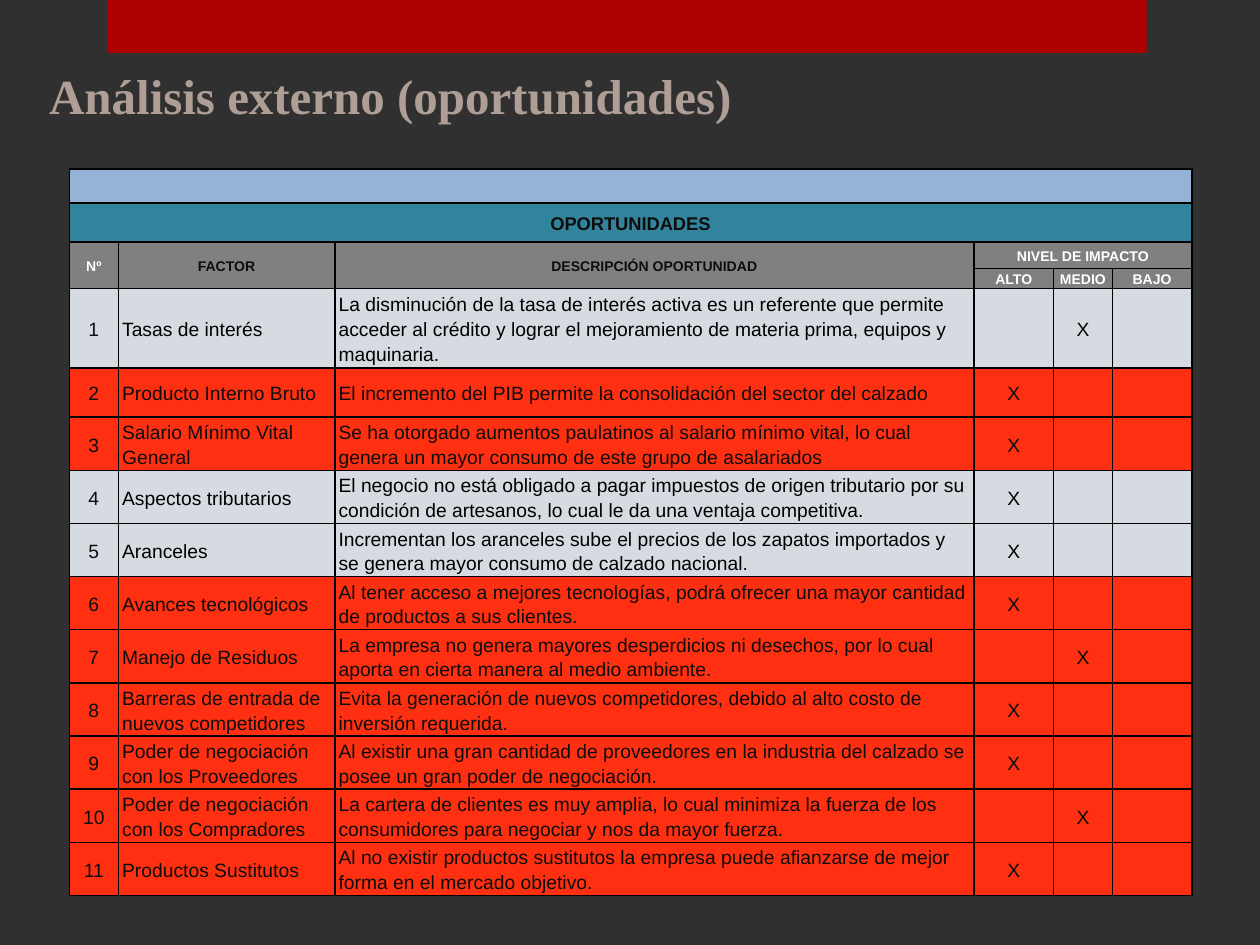
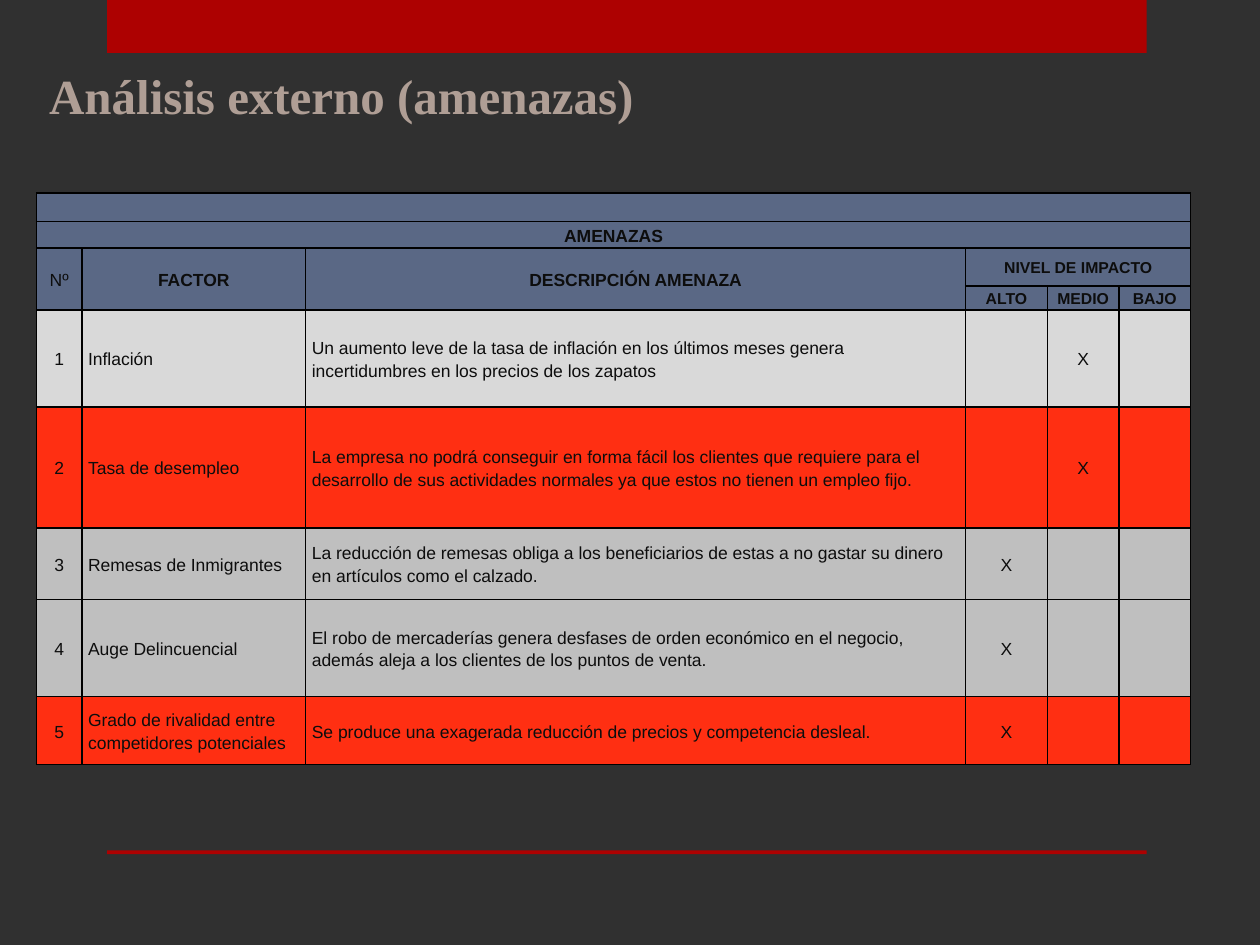
from dataclasses import dataclass
from itertools import product

from lxml.etree import SubElement
from pptx import Presentation
from pptx.dml.color import RGBColor
from pptx.enum.shapes import MSO_SHAPE as Shape
from pptx.enum.text import MSO_ANCHOR as Anchor, MSO_AUTO_SIZE as AutoSize, PP_ALIGN as Align
from pptx.oxml import parse_xml
from pptx.oxml.ns import nsdecls, qn
from pptx.util import Inches, Pt

GRID_COLUMNS, GRID_ROWS = 100, 75
SLIDE_WIDTH, SLIDE_HEIGHT = Inches(10), Inches(7.5)
TITLE_ONLY = 5


@dataclass(frozen=True)
class Theme:
    background: str = "303030"
    band: str = "AD0101"
    title: str = "AF9E95"
    ink: str = "0D0D0D"
    black: str = "000000"
    white: str = "FFFFFF"
    red: str = "FF2F12"
    title_font: str = "Times New Roman"
    table_font: str = "Arial"
    title_size: float = 28
    empty_size: float = 8
    line_spacing: float = 1.15
    border_width: float = 1


THEME = Theme()


@dataclass(frozen=True)
class Box:
    left: float
    top: float
    width: float
    height: float

    def placement(self):
        column, row = SLIDE_WIDTH / GRID_COLUMNS, SLIDE_HEIGHT / GRID_ROWS
        return {"left": round(self.left * column), "top": round(self.top * row),
                "width": round(self.width * column), "height": round(self.height * row)}


@dataclass(frozen=True)
class TableStyle:
    top_fill: str
    heading_fill: str
    label_fill: str
    label_color: str
    light_text: str
    heading_size: float
    label_size: float
    level_size: float
    body_size: float
    number_bold: bool
    inset: float


@dataclass(frozen=True)
class Factor:
    name: str
    description: str
    level: int
    fill: str = THEME.red


HIGH, MEDIUM = 0, 1
LEVELS = ["ALTO", "MEDIO", "BAJO"]
PALE, LIGHT_GREY, GREY = "D6DBE1", "D9D9D9", "BFBFBF"

OPPORTUNITY_STYLE = TableStyle(
    top_fill="95B3D7", heading_fill="31849B", label_fill="808080",
    label_color=THEME.white, light_text=THEME.black, heading_size=10.5,
    label_size=8, level_size=8, body_size=11, number_bold=True, inset=0.03)
THREAT_STYLE = TableStyle(
    top_fill="5A6885", heading_fill="5A6885", label_fill="5A6885",
    label_color=THEME.ink, light_text=THEME.ink, heading_size=10,
    label_size=10, level_size=9, body_size=10, number_bold=False, inset=0.05)

OPPORTUNITIES = [
    Factor("Tasas de interés", "La disminución de la tasa de interés activa es un referente que permite "
           "acceder al crédito y lograr el mejoramiento de materia prima, equipos y maquinaria.", MEDIUM, PALE),
    Factor("Producto Interno Bruto",
           "El incremento del PIB permite la consolidación del sector del calzado", HIGH),
    Factor("Salario Mínimo Vital General", "Se ha otorgado aumentos paulatinos al salario mínimo vital, "
           "lo cual genera un mayor consumo de este grupo de asalariados", HIGH),
    Factor("Aspectos tributarios", "El negocio no está obligado a pagar impuestos de origen tributario por su "
           "condición de artesanos, lo cual le da una ventaja competitiva.", HIGH, PALE),
    Factor("Aranceles", "Incrementan los aranceles sube el precios de los zapatos importados y se genera "
           "mayor consumo de calzado nacional.", HIGH, PALE),
    Factor("Avances tecnológicos", "Al tener acceso a mejores tecnologías, podrá ofrecer una mayor cantidad "
           "de productos a sus clientes.", HIGH),
    Factor("Manejo de Residuos", "La empresa no genera mayores desperdicios ni desechos, por lo cual aporta "
           "en cierta manera al medio ambiente.", MEDIUM),
    Factor("Barreras de entrada de nuevos competidores",
           "Evita la generación de nuevos competidores, debido al alto costo de inversión requerida.", HIGH),
    Factor("Poder de negociación con los Proveedores", "Al existir una gran cantidad de proveedores en la "
           "industria del calzado se posee un gran poder de negociación.", HIGH),
    Factor("Poder de negociación con los Compradores", "La cartera de clientes es muy amplia, lo cual minimiza "
           "la fuerza de los consumidores para negociar y nos da mayor fuerza.", MEDIUM),
    Factor("Productos Sustitutos", "Al no existir productos sustitutos la empresa puede afianzarse de mejor "
           "forma en el mercado objetivo.", HIGH),
]
THREATS = [
    Factor("Inflación", "Un aumento leve de la tasa de inflación en los últimos meses genera incertidumbres "
           "en los precios de los zapatos", MEDIUM, LIGHT_GREY),
    Factor("Tasa de desempleo", "La empresa no podrá conseguir en forma fácil los clientes que requiere para el "
           "desarrollo de sus actividades normales ya que estos no tienen un empleo fijo.", MEDIUM),
    Factor("Remesas de Inmigrantes", "La reducción de remesas obliga a los beneficiarios de estas a no gastar "
           "su dinero en artículos como el calzado.", HIGH, GREY),
    Factor("Auge Delincuencial", "El robo de mercaderías genera desfases de orden económico en el negocio, "
           "además aleja a los clientes de los puntos de venta.", HIGH, GREY),
    Factor("Grado de rivalidad entre competidores potenciales",
           "Se produce una exagerada reducción de precios y competencia desleal.", HIGH),
]


def apply(target, values):
    for name, value in values.items():
        setattr(target, name, value)


def paint(fill, color):
    fill.solid()
    fill.fore_color.rgb = RGBColor.from_string(color)


def add_span(para, text, font, size, color, bold):
    span = para.add_run()
    span.text = text
    apply(span.font, {"name": font, "size": Pt(size), "bold": bold})
    span.font.color.rgb = RGBColor.from_string(color)


def add_bands(page):
    for box in (Box(8.5, 0, 82.5, 4.2), Box(8.5, 67.5, 82.5, 0.3)):
        band = page.shapes.add_shape(Shape.RECTANGLE, **box.placement())
        band.shadow.inherit = False
        paint(band.fill, THEME.band)
        band.line.fill.background()


def set_title(page, text, box):
    title = page.shapes.title
    apply(title, box.placement())
    frame = title.text_frame
    apply(frame, {"word_wrap": False, "auto_size": AutoSize.SHAPE_TO_FIT_TEXT,
                  "vertical_anchor": Anchor.TOP})
    para = frame.paragraphs[0]
    para.alignment = Align.LEFT
    add_span(para, text, THEME.title_font, THEME.title_size, THEME.title, True)


def draw_borders(cell):
    properties = cell._tc.get_or_add_tcPr()
    for index, side in enumerate(("lnL", "lnR", "lnT", "lnB")):
        properties.insert(index, parse_xml(
            f'<a:{side} {nsdecls("a")} w="{Pt(THEME.border_width)}"><a:solidFill>'
            f'<a:srgbClr val="{THEME.black}"/></a:solidFill></a:{side}>'))


def format_cell(cell, fill, inset):
    apply(cell, {"vertical_anchor": Anchor.MIDDLE, "margin_left": Inches(inset),
                 "margin_right": Inches(inset), "margin_top": 0, "margin_bottom": 0})
    paint(cell.fill, fill)
    draw_borders(cell)
    ending = SubElement(cell.text_frame.paragraphs[0]._p, qn("a:endParaRPr"))
    ending.set("sz", str(round(THEME.empty_size * 100)))


def write_cell(cell, text, size, color, bold=False, align=Align.CENTER):
    para = cell.text_frame.paragraphs[0]
    apply(para, {"alignment": align, "line_spacing": THEME.line_spacing})
    add_span(para, text, THEME.table_font, size, color, bold)


def write_header(table, kind, heading, style):
    table.cell(0, 0).merge(table.cell(0, 5))
    table.cell(1, 0).merge(table.cell(1, 5))
    table.cell(2, 3).merge(table.cell(2, 5))
    for column in range(3):
        table.cell(2, column).merge(table.cell(3, column))
    write_cell(table.cell(1, 0), heading, style.heading_size, THEME.ink, True)
    write_cell(table.cell(2, 0), "Nº", style.label_size, style.label_color, style.number_bold)
    for column, label in enumerate(("FACTOR", f"DESCRIPCIÓN {kind}"), 1):
        write_cell(table.cell(2, column), label, style.label_size, THEME.ink, True)
    write_cell(table.cell(2, 3), "NIVEL DE IMPACTO", style.level_size, style.label_color, True)
    for column, level in enumerate(LEVELS, 3):
        write_cell(table.cell(3, column), level, style.level_size, style.label_color, True)


def write_factors(table, factors, style):
    for number, factor in enumerate(factors, 1):
        row = number + 3
        color = THEME.ink if factor.fill == THEME.red else style.light_text
        write_cell(table.cell(row, 0), str(number), style.body_size, THEME.ink)
        for column, text in enumerate((factor.name, factor.description), 1):
            write_cell(table.cell(row, column), text, style.body_size, color, align=Align.LEFT)
        write_cell(table.cell(row, 3 + factor.level), "X", style.body_size, color)


def add_factor_table(page, box, columns, rows, kind, heading, factors, style):
    place = box.placement()
    table = page.shapes.add_table(len(rows), len(columns), **place).table
    apply(table, {"first_row": False, "horz_banding": False})
    for column, share in zip(table.columns, columns):
        column.width = round(place["width"] * share / sum(columns))
    for row, share in zip(table.rows, rows):
        row.height = round(place["height"] * share / sum(rows))
    fills = [style.top_fill, style.heading_fill, style.label_fill, style.label_fill]
    fills += [factor.fill for factor in factors]
    for row, column in product(range(len(rows)), range(len(columns))):
        format_cell(table.cell(row, column), fills[row], style.inset)
    write_header(table, kind, heading, style)
    write_factors(table, factors, style)


def add_analysis_page(deck, title, title_box, **table_parts):
    page = deck.slides.add_slide(deck.slide_layouts[TITLE_ONLY])
    set_title(page, title, title_box)
    add_bands(page)
    add_factor_table(page, **table_parts)


def main():
    deck = Presentation()
    apply(deck, {"slide_width": SLIDE_WIDTH, "slide_height": SLIDE_HEIGHT})
    paint(deck.slide_master.background.fill, THEME.background)
    add_analysis_page(
        deck, "Análisis externo (oportunidades)", Box(2.9, 4.7, 63.4, 5.7),
        box=Box(5.5, 13.4, 89.1, 57.5), columns=[3.9, 17.2, 50.8, 6.3, 4.7, 6.3],
        rows=[2.7, 3.1, 2.1, 1.6, 6.3, 3.9] + [4.2] * 9,
        kind="OPORTUNIDAD", heading="OPORTUNIDADES", factors=OPPORTUNITIES, style=OPPORTUNITY_STYLE)
    add_analysis_page(
        deck, "Análisis externo (amenazas)", Box(2.9, 4.7, 54.9, 5.7),
        box=Box(2.9, 15.3, 91.6, 45.4), columns=[3.6, 17.8, 52.5, 6.5, 5.7, 5.7],
        rows=[2.3, 2.1, 3, 1.9, 7.7, 9.6, 5.7, 7.7, 5.4],
        kind="AMENAZA", heading="AMENAZAS", factors=THREATS, style=THREAT_STYLE)
    deck.save("out.pptx")


if __name__ == "__main__":
    main()
